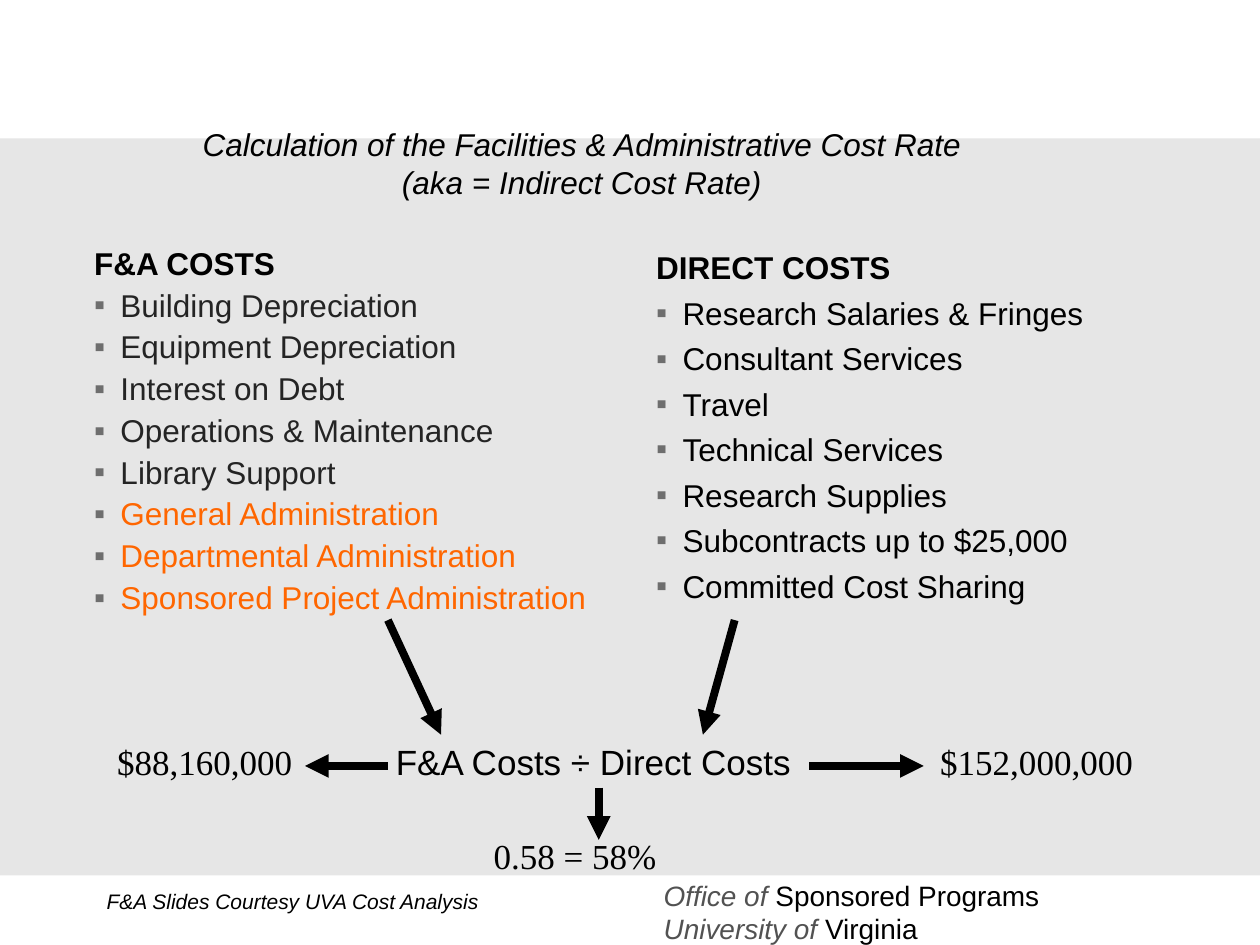
from lxml.etree import SubElement
from pptx import Presentation
from pptx.dml.color import RGBColor
from pptx.enum.shapes import MSO_CONNECTOR, MSO_SHAPE
from pptx.enum.text import MSO_ANCHOR, PP_ALIGN
from pptx.oxml.ns import qn
from pptx.util import Cm, Pt

HUES = {"black": "000000", "panel": "E6E6E6", "item": "242424",
        "admin": "FF6600", "mark": "6E6E6E", "muted": "525252"}
BODY = {"name": "Arial", "size": Pt(18)}
HEAD = {**BODY, "bold": True}
TITLE = {**BODY, "italic": True}
TERM = {"name": "Arial", "size": Pt(20)}
SUM = {"name": "Times New Roman", "size": Pt(20)}
FOOT = {"name": "Arial", "size": Pt(16)}
SLANT = {**FOOT, "italic": True}
CREDIT = {"name": "Arial", "size": Pt(12), "italic": True}
BARE = {"margin_left": 0, "margin_right": 0}


def apply(obj, look):
    """Set each attribute in look on obj."""
    for key, val in look.items():
        setattr(obj, key, val)


def hue(name):
    """Return the named colour."""
    return RGBColor.from_string(HUES[name])


def frame(slide, box, **look):
    """Add a wrapping text box and return its frame."""
    text = slide.shapes.add_textbox(*map(Cm, box)).text_frame
    apply(text, {"word_wrap": True, **look})
    return text


def write(para, text, font, tint="black", **look):
    """Append text to a paragraph in one format."""
    apply(para, look)
    for part, line in enumerate(text.split("\n")):
        if part:
            para.add_line_break()
        run = para.add_run()
        run.text = line
        apply(run.font, font)
        run.font.color.rgb = hue(tint)


def bullet(para):
    """Give a paragraph a hanging square bullet."""
    props = para._p.get_or_add_pPr()
    props.set("marL", str(Cm(0.53)))
    props.set("indent", str(-Cm(0.53)))
    SubElement(SubElement(props, qn("a:buClr")), qn("a:srgbClr"), val=HUES["mark"])
    SubElement(props, qn("a:buFont"), typeface="Arial")
    SubElement(props, qn("a:buChar"), char="▪")


def panel(slide, box):
    """Draw the grey band behind the content."""
    shape = slide.shapes.add_shape(MSO_SHAPE.RECTANGLE, *map(Cm, box))
    shape.shadow.inherit = False
    shape.fill.solid()
    shape.fill.fore_color.rgb = hue("panel")
    shape.line.fill.background()


def title(slide, box, text):
    """Write the centred title."""
    area = frame(slide, box, vertical_anchor=MSO_ANCHOR.MIDDLE, **BARE)
    write(area.paragraphs[0], text, TITLE, alignment=PP_ALIGN.CENTER)


def costs(slide, box, head, groups, pitch):
    """List bulleted costs under a bold heading."""
    area = frame(slide, box, **BARE)
    write(area.paragraphs[0], head, HEAD, line_spacing=pitch)
    for tint, items in groups.items():
        for item in items:
            para = area.add_paragraph()
            bullet(para)
            write(para, item, BODY, tint, line_spacing=pitch, space_before=Pt(4.4))


def arrow(slide, start, end):
    """Draw a thick black arrow between two points."""
    line = slide.shapes.add_connector(MSO_CONNECTOR.STRAIGHT, *map(Cm, start + end))
    line.line.width = Pt(4.5)
    line.line.color.rgb = hue("black")
    SubElement(line.line._get_or_add_ln(), qn("a:tailEnd"), type="triangle")
    SubElement(line._element.spPr, qn("a:effectLst"))


def ratio(slide, box):
    """Show the rate formula, its amounts and its arrows."""
    left, top, wide, high = box
    row, mid, tall = 2.31, 2.94, 1.09
    for x, y, w, text, font, side in (
            (5.51, row, 8.69, "F&A Costs ÷ Direct Costs", TERM, PP_ALIGN.CENTER),
            (wide - 6.15, row, 6.15, "$152,000,000", SUM, PP_ALIGN.RIGHT),
            (0, row, 4.88, "$88,160,000", SUM, PP_ALIGN.LEFT),
            (7.59, high - tall, 5, "0.58 = 58%", SUM, PP_ALIGN.LEFT)):
        area = frame(slide, (left + x, top + y, w, tall))
        write(area.paragraphs[0], text, font, alignment=side)
    for x1, y1, x2, y2 in ((5.71, 0, 6.78, row), (12.7, 0, 12.06, row),
                           (5.71, mid, 4.04, mid), (14.2, mid, 16.51, mid),
                           (9.96, 3.38, 9.96, 4.43)):
        arrow(slide, (left + x1, top + y1), (left + x2, top + y2))


def office(slide, box, lines):
    """Write the two-tone office name."""
    area = frame(slide, box)
    for row, (lead, name) in enumerate(lines):
        para = area.add_paragraph() if row else area.paragraphs[0]
        write(para, lead, SLANT, "muted")
        write(para, name, FOOT)


def credit(slide, box, text):
    """Write the source credit."""
    write(frame(slide, box).paragraphs[0], text, CREDIT)


def main():
    """Build and save the slide."""
    deck = Presentation()
    apply(deck, {"slide_width": Cm(25.4), "slide_height": Cm(19.05)})
    slide = deck.slides.add_slide(deck.slide_layouts[6])
    panel(slide, (0, 2.79, 25.4, 14.86))
    office(slide, (13.13, 17.58, 10.16, 1.63),
           [("Office of ", "Sponsored Programs"), ("University of ", "Virginia")])
    title(slide, (2.74, 2.34, 17.98, 1.9),
          "Calculation of the Facilities & Administrative Cost Rate\n"
          "(aka = Indirect Cost Rate)")
    costs(slide, (1.9, 4.88, 11, 8.86), "F&A COSTS", {
        "item": ["Building Depreciation", "Equipment Depreciation",
                 "Interest on Debt", "Operations & Maintenance", "Library Support"],
        "admin": ["General Administration", "Departmental Administration",
                  "Sponsored Project Administration"]}, 0.9)
    costs(slide, (13.23, 4.88, 10.9, 9.86), "DIRECT COSTS", {
        "black": ["Research Salaries & Fringes", "Consultant Services", "Travel",
                  "Technical Services", "Research Supplies",
                  "Subcontracts up to $25,000", "Committed Cost Sharing"]}, 1.0)
    ratio(slide, (2.11, 12.5, 20.98, 5.28))
    credit(slide, (1.9, 17.78, 9.32, 0.76), "F&A Slides Courtesy UVA Cost Analysis")
    deck.save("out.pptx")


if __name__ == "__main__":
    main()
